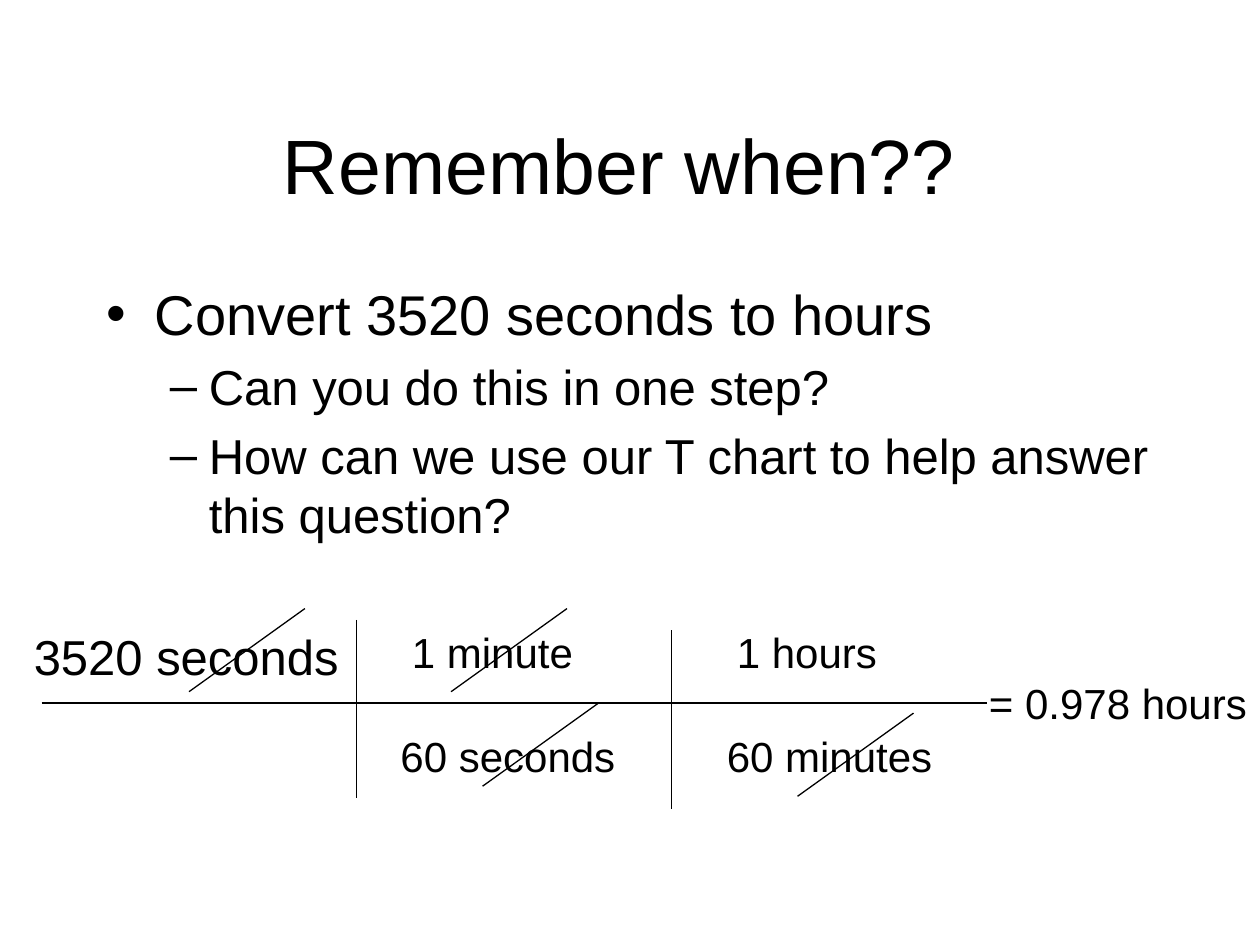
"""Build a slide that converts seconds to hours with a T chart."""
from lxml import etree
from pptx import Presentation
from pptx.dml.color import RGBColor
from pptx.enum.shapes import MSO_CONNECTOR
from pptx.enum.text import MSO_ANCHOR, PP_ALIGN
from pptx.oxml.ns import qn
from pptx.util import Inches, Pt

STRAIGHT = MSO_CONNECTOR.STRAIGHT
MIDDLE = MSO_ANCHOR.MIDDLE
CENTER = PP_ALIGN.CENTER
BLACK = "000000"


def paint(target, color):
    target.rgb = RGBColor.from_string(color)


def write(box, lines):
    frame = slide.shapes.add_textbox(*map(Inches, box)).text_frame
    frame.word_wrap = True
    for i, (text, size) in enumerate(lines):
        para = frame.add_paragraph() if i else frame.paragraphs[0]
        para.text = text
        para.font.name = "Arial"
        para.font.size = Pt(size)
        paint(para.font.color, BLACK)
    return frame


prs = Presentation()
prs.slide_width, prs.slide_height = Inches(10), Inches(7.5)
slide = prs.slides.add_slide(prs.slide_layouts[6])

title = write((0.75, 0.67, 8.5, 1.25), [("Remember when?? ", 44)])
title.vertical_anchor = MIDDLE
title.paragraphs[0].alignment = CENTER

body = write((0.75, 2.17, 8.5, 4.5), [
    ("Convert 3520 seconds to hours", 32),
    ("Can you do this in one step?", 28),
    ("How can we use our T chart to help answer this question?", 28),
])
sub = (1, 0.81, 0.31, "–")
for para, (level, left, hang, mark) in zip(body.paragraphs, [(0, 0.38, 0.38, "•"), sub, sub]):
    para.level = level
    props = para._p.get_or_add_pPr()
    props.set("marL", str(Inches(left)))
    props.set("indent", str(-Inches(hang)))
    space = etree.SubElement(props, qn("a:spcBef"))
    etree.SubElement(space, qn("a:spcPct"), val="20000")
    etree.SubElement(props, qn("a:buFont"), typeface="Arial")
    etree.SubElement(props, qn("a:buChar"), char=mark)

terms = [
    ("3520 seconds", 28, 0.17, 4.92, 2.67),
    ("60 seconds", 24, 3.08, 5.75, 1.92),
    ("1 minute", 24, 3.17, 4.92, 1.92),
    ("60 minutes", 24, 5.67, 5.75, 1.92),
    ("1 hours", 24, 5.75, 4.92, 1.92),
    ("= 0.978 hours", 24, 7.75, 5.33, 2.25),
]
for text, size, left, top, width in terms:
    write((left, top, width, 0.5), [(text, size)])

chart = [(0.33, 5.58, 7.83, 5.58), (2.83, 4.92, 2.83, 6.33), (5.33, 5, 5.33, 6.42)]
strikes = [
    (left, low, left + 0.92, low - 0.66)
    for left, low in [(1.5, 5.49), (3.58, 5.49), (3.83, 6.24), (6.33, 6.32)]
]
for ends in chart + strikes:
    line = slide.shapes.add_connector(STRAIGHT, *map(Inches, ends))
    line.line.width = Pt(0.75)
    paint(line.line.color, BLACK)
    etree.SubElement(line._element.spPr, qn("a:effectLst"))

prs.save("out.pptx")
